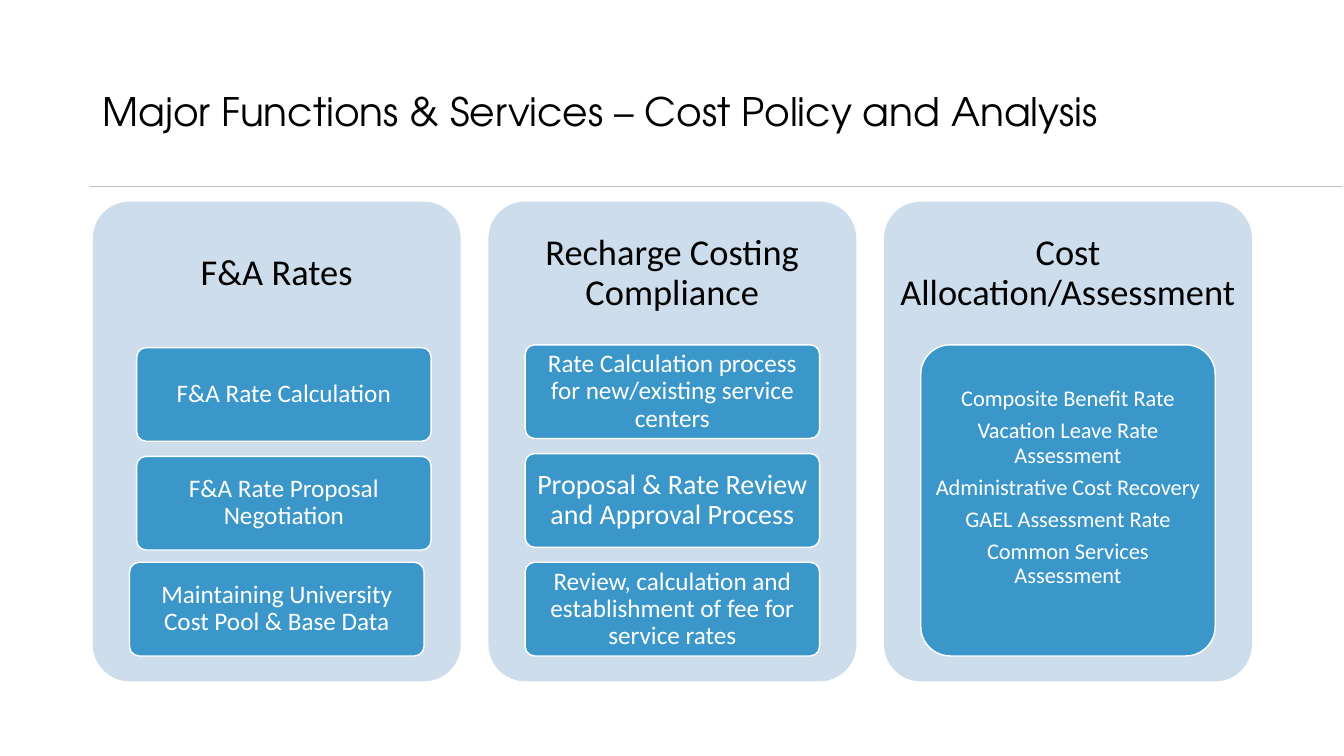
import pptx
import pptx.dml.color
import pptx.enum.shapes
import pptx.enum.text
import pptx.oxml.ns
import pptx.util
import lxml.etree

Cm = pptx.util.Cm
Pt = pptx.util.Pt
RGBColor = pptx.dml.color.RGBColor
SHAPE = pptx.enum.shapes.MSO_SHAPE
ALIGN = pptx.enum.text.PP_ALIGN

BLACK = RGBColor(0x00, 0x00, 0x00)
WHITE = RGBColor(0xFF, 0xFF, 0xFF)
PALE = RGBColor(0xCE, 0xDD, 0xEB)
BLUE = RGBColor(0x3B, 0x97, 0xC9)
GREY = RGBColor(0xBF, 0xBF, 0xBF)

CARD_W, CARD_H, CARD_STEP = 7.42, 2.36, 2.74
PANEL_W, PANEL_H, PANEL_STEP = 9.27, 12.09, 9.97

PANELS = [
    ("F&A Rates", [
        (["F&A Rate Calculation"], 18, 1, (0.18, 0.07)),
        (["F&A Rate Proposal Negotiation"], 18, 1, (0.18, 0.07)),
        (["Maintaining University Cost Pool & Base Data"], 18, 1, (0, 0)),
    ]),
    ("Recharge Costing Compliance", [
        (["Rate Calculation process for new/existing service centers"], 18, 1, (0, 0)),
        (["Proposal & Rate Review and Approval Process"], 20, 1, (0, 0)),
        (["Review, calculation and establishment of fee for service rates"], 18, 1, (0, 0)),
    ]),
    ("Cost Allocation/Assessment", [
        (["Composite Benefit Rate", "Vacation Leave Rate Assessment",
          "Administrative Cost Recovery", "GAEL Assessment Rate",
          "Common Services Assessment"], 16, 3, (0, 0)),
    ]),
]


def write(shape, lines, size, color, font="Calibri", align=ALIGN.CENTER,
          inset=(0.13, 0.1, 0.13, 0.1)):
    """Fill a shape with formatted paragraphs, centred vertically."""
    frame = shape.text_frame
    frame.word_wrap = True
    frame.vertical_anchor = pptx.enum.text.MSO_ANCHOR.MIDDLE
    (frame.margin_left, frame.margin_top,
     frame.margin_right, frame.margin_bottom) = map(Cm, inset)
    for i, line in enumerate(lines):
        para = frame.paragraphs[0] if i == 0 else frame.add_paragraph()
        para.alignment = align
        para.line_spacing = 0.9
        if i:
            para.space_before = Pt(size * 0.35)
        run = para.add_run()
        run.text = line
        run.font.name = font
        run.font.size = Pt(size)
        run.font.color.rgb = color


def block(slide, left, top, width, height, fill, edge=None):
    """Add a rounded rectangle."""
    shape = slide.shapes.add_shape(
        SHAPE.ROUNDED_RECTANGLE, Cm(left), Cm(top), Cm(width), Cm(height))
    shape.adjustments[0] = 0.1
    shape.shadow.inherit = False
    shape.fill.solid()
    shape.fill.fore_color.rgb = fill
    if edge is None:
        shape.line.fill.background()
    else:
        shape.line.color.rgb = edge
        shape.line.width = Pt(1)
    return shape


def header(slide, left, top, width, height):
    """Add the slide title and the rule beneath it."""
    title = slide.shapes.add_textbox(Cm(left), Cm(top), Cm(width), Cm(height))
    write(title, ["Major Functions & Services – Cost Policy and Analysis"], 28, BLACK,
          font="TeX Gyre Adventor", align=ALIGN.LEFT, inset=(0.25, 0.13, 0.25, 0.13))
    base = Cm(top + height)
    rule = slide.shapes.add_connector(
        pptx.enum.shapes.MSO_CONNECTOR.STRAIGHT,
        Cm(left - 0.08), base, Cm(left + 31.47), base)
    rule.line.color.rgb = GREY
    rule.line.width = Pt(0.5)
    lxml.etree.SubElement(rule._element.spPr, pptx.oxml.ns.qn("a:effectLst"))


def panel(slide, left, top, width, height, head, cards):
    """Add one pale panel with its heading and cards."""
    block(slide, left, top, width, height, PALE)
    label = slide.shapes.add_textbox(
        Cm(left), Cm(top), Cm(width), Cm(height * 0.3))
    write(label, [head], 26, BLACK, inset=(0.28,) * 4)
    edge = (width - CARD_W) / 2
    for i, (lines, size, span, (dx, dy)) in enumerate(cards):
        card = block(slide, left + edge + dx, top + 3.61 + i * CARD_STEP + dy,
                     CARD_W, CARD_H + (span - 1) * CARD_STEP, BLUE, WHITE)
        inset = (0.1, 0.08, 0.1, 0.71) if span > 1 else (0.13, 0.1, 0.13, 0.1)
        write(card, lines, size, WHITE, inset=inset)


def main():
    """Build and save the slide."""
    deck = pptx.Presentation()
    deck.slide_width, deck.slide_height = Cm(33.87), Cm(19.05)
    slide = deck.slides.add_slide(deck.slide_layouts[6])
    header(slide, 2.34, 1.02, 29.59, 3.68)
    for i, (head, cards) in enumerate(PANELS):
        panel(slide, 2.34 + i * PANEL_STEP, 5.08, PANEL_W, PANEL_H, head, cards)
    deck.save("out.pptx")


if __name__ == "__main__":
    main()
